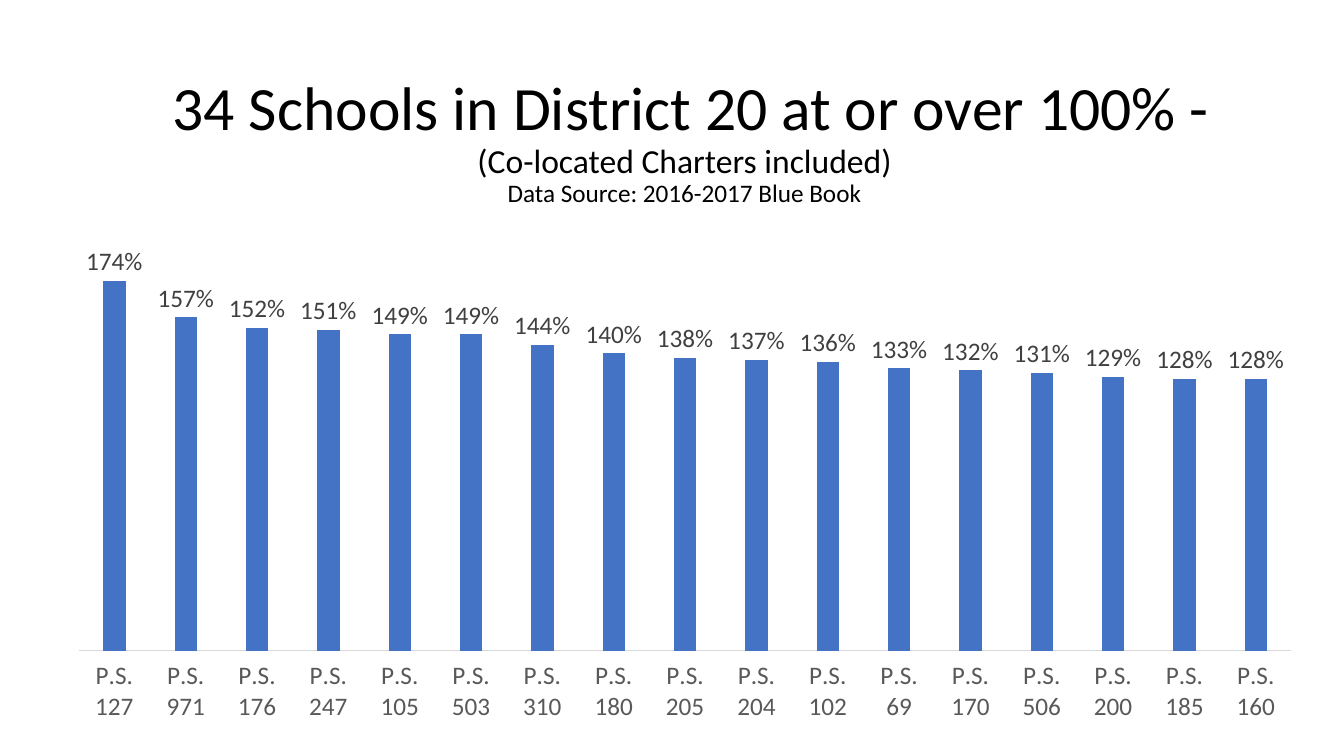
"""Build a slide charting the most overcrowded schools in District 20."""
from lxml import etree
from pptx import Presentation
from pptx.chart.data import CategoryChartData
from pptx.dml.color import RGBColor
from pptx.enum.chart import XL_CHART_TYPE, XL_LABEL_POSITION, XL_TICK_LABEL_POSITION, XL_TICK_MARK
from pptx.enum.text import MSO_ANCHOR, MSO_AUTO_SIZE, PP_ALIGN
from pptx.oxml.ns import qn
from pptx.util import Inches, Pt

COLUMN = XL_CHART_TYPE.COLUMN_CLUSTERED
OUTSIDE_END = XL_LABEL_POSITION.OUTSIDE_END
LABELS_LOW = XL_TICK_LABEL_POSITION.LOW
NO_TICK = XL_TICK_MARK.NONE
MIDDLE = MSO_ANCHOR.MIDDLE
NO_AUTOFIT = MSO_AUTO_SIZE.NONE
CENTER = PP_ALIGN.CENTER

BLACK = RGBColor(0x00, 0x00, 0x00)
BAR_BLUE = RGBColor(0x44, 0x72, 0xC4)
LABEL_GRAY = RGBColor(0x40, 0x40, 0x40)
AXIS_GRAY = RGBColor(0x59, 0x59, 0x59)
LINE_GRAY = RGBColor(0xD9, 0xD9, 0xD9)
FONT = "Calibri"

TITLE_LINES = [
    (" 34 Schools in District 20 at or over 100% -", 44),
    ("(Co-located Charters included)", 24),
    ("Data Source: 2016-2017 Blue Book", 18),
]
UTILIZATION = [
    (127, 1.74), (971, 1.57), (176, 1.52), (247, 1.51), (105, 1.49), (503, 1.49),
    (310, 1.44), (180, 1.40), (205, 1.38), (204, 1.37), (102, 1.36), (69, 1.33),
    (170, 1.32), (506, 1.31), (200, 1.29), (185, 1.28), (160, 1.28),
]
PLOT_LAYOUT = {"x": 0.02, "y": 0.02, "w": 0.96, "h": 0.83}


def set_attributes(target, values):
    """Set each named attribute on the target."""
    for name, value in values.items():
        setattr(target, name, value)


def format_font(font, size, color):
    """Apply the slide font with a size and colour."""
    set_attributes(font, {"name": FONT, "size": Pt(size), "bold": False})
    font.color.rgb = color


def fill_title(title):
    """Place the title and write its lines in descending sizes."""
    set_attributes(title, {"left": Inches(1.04), "top": Inches(0.69),
                           "width": Inches(11.5), "height": Inches(1.45)})
    set_attributes(title.text_frame, {"word_wrap": True, "auto_size": NO_AUTOFIT,
                                      "vertical_anchor": MIDDLE})
    paragraph = title.text_frame.paragraphs[0]
    set_attributes(paragraph, {"alignment": CENTER, "line_spacing": 0.9})
    for index, (text, size) in enumerate(TITLE_LINES):
        if index:
            paragraph.add_line_break()
        run = paragraph.add_run()
        run.text = text
        format_font(run.font, size, BLACK)


def fix_plot_area(chart):
    """Pin the inner plot area to fractions of the chart frame."""
    plot_area = chart.plots[0]._element.getparent()
    layout = plot_area.find(qn("c:layout"))
    if layout is None:
        layout = etree.Element(qn("c:layout"))
        plot_area.insert(0, layout)
    manual = etree.SubElement(layout, qn("c:manualLayout"))
    settings = {"layoutTarget": "inner", "xMode": "edge", "yMode": "edge", **PLOT_LAYOUT}
    for name, value in settings.items():
        etree.SubElement(manual, qn(f"c:{name}")).set("val", str(value))


def format_axes(chart):
    """Style the school axis and hide the percentage axis."""
    axis = chart.category_axis
    set_attributes(axis, {"major_tick_mark": NO_TICK, "minor_tick_mark": NO_TICK,
                          "has_major_gridlines": False, "tick_label_position": LABELS_LOW})
    format_font(axis.tick_labels.font, 18, AXIS_GRAY)
    axis.format.line.color.rgb = LINE_GRAY
    axis.format.line.width = Pt(0.75)
    set_attributes(chart.value_axis, {"minimum_scale": 0, "maximum_scale": 2,
                                      "has_major_gridlines": False, "visible": False})
    chart.value_axis.tick_labels.number_format = "0%"
    chart.value_axis.tick_labels.number_format_is_linked = False


def format_columns(plot):
    """Colour the columns and label them with their values."""
    set_attributes(plot, {"gap_width": 219, "overlap": -27, "vary_by_categories": False})
    series = plot.series[0]
    series.format.fill.solid()
    series.format.fill.fore_color.rgb = BAR_BLUE
    labels = series.data_labels
    set_attributes(labels, {"show_value": True, "position": OUTSIDE_END,
                            "number_format": "0%", "number_format_is_linked": False})
    format_font(labels.font, 18, LABEL_GRAY)


def add_utilization_chart(slide):
    """Add the column chart of school utilization."""
    data = CategoryChartData(number_format="0%")
    data.categories = [f"P.S. {school}" for school, _ in UTILIZATION]
    data.add_series("Series 1", [share for _, share in UTILIZATION])
    chart = slide.shapes.add_chart(COLUMN, Inches(0.53), Inches(2.14),
                                   Inches(12.53), Inches(5.08), data).chart
    set_attributes(chart, {"has_legend": False, "has_title": False})
    format_font(chart.font, 10, BLACK)
    format_axes(chart)
    format_columns(chart.plots[0])
    fix_plot_area(chart)


def main():
    """Build and save the presentation."""
    presentation = Presentation()
    set_attributes(presentation, {"slide_width": Inches(13.33), "slide_height": Inches(7.5)})
    slide = presentation.slides.add_slide(presentation.slide_layouts[5])
    fill_title(slide.shapes.title)
    add_utilization_chart(slide)
    presentation.save("out.pptx")


if __name__ == "__main__":
    main()
